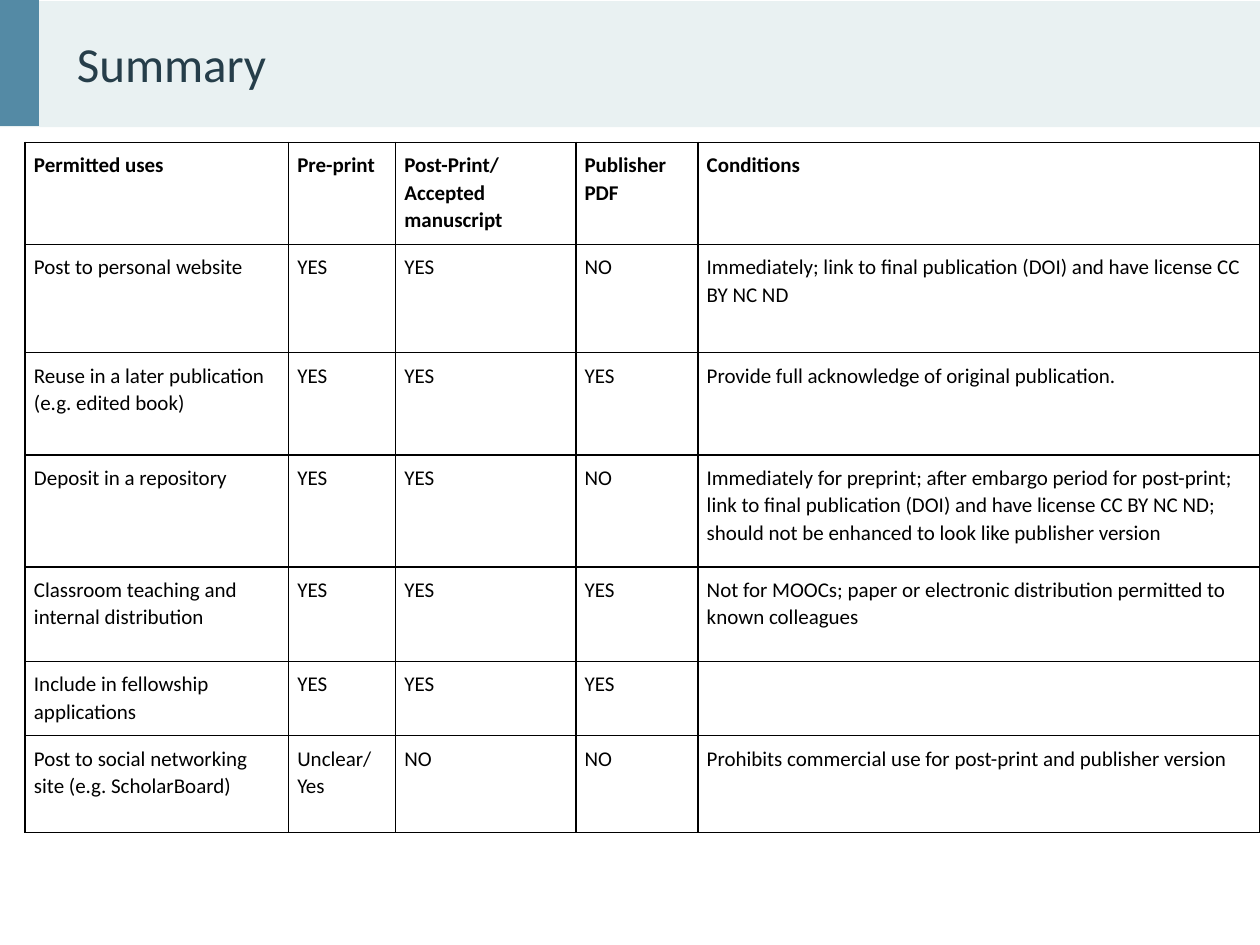
from lxml.etree import SubElement
from pptx import Presentation
from pptx.dml.color import RGBColor
from pptx.enum.shapes import MSO_SHAPE as Shape
from pptx.enum.text import MSO_ANCHOR as Anchor
from pptx.oxml.ns import qn
from pptx.util import Inches, Pt

FONT = "Calibri"
WIDTH, HEIGHT = 10, 7.5
BAND_HEIGHT, ACCENT_WIDTH = 1, 0.31
TABLE_LEFT, TABLE_TOP = 0.2, 1.13
COLUMN_WIDTHS = [2.09, 0.85, 1.43, 0.97, 4.46]
ROW_HEIGHTS = [0.81, 0.86, 0.81, 0.89, 0.75, 0.59, 0.77]
ROWS = [
    ["Permitted uses", "Pre-print", "Post-Print/Accepted manuscript", "Publisher PDF", "Conditions"],
    ["Post to personal website", "YES", "YES", "NO",
     "Immediately; link to final publication (DOI) and have license CC BY NC ND"],
    ["Reuse in a later publication (e.g. edited book)", "YES", "YES", "YES",
     "Provide full acknowledge of original publication."],
    ["Deposit in a repository", "YES", "YES", "NO",
     "Immediately for preprint; after embargo period for post-print; link to final publication (DOI) "
     "and have license CC BY NC ND; should not be enhanced to look like publisher version"],
    ["Classroom teaching and internal distribution", "YES", "YES", "YES",
     "Not for MOOCs; paper or electronic distribution permitted to known colleagues"],
    ["Include in fellowship applications", "YES", "YES", "YES", ""],
    ["Post to social networking site (e.g. ScholarBoard)", "Unclear/Yes", "NO", "NO",
     "Prohibits commercial use for post-print and publisher version"],
]


def color(value):
    return RGBColor.from_string(value)


def format_runs(paragraph, size, value, bold=False):
    for run in paragraph.runs:
        run.font.name = FONT
        run.font.size = Pt(size)
        run.font.bold = bold
        run.font.color.rgb = color(value)


def set_margins(target, horizontal, vertical):
    target.margin_left = target.margin_right = Inches(horizontal)
    target.margin_top = target.margin_bottom = Inches(vertical)


def add_band(slide, left, top, width, height, value):
    shape = slide.shapes.add_shape(
        Shape.RECTANGLE, Inches(left), Inches(top), Inches(width), Inches(height))
    shape.shadow.inherit = False
    shape.fill.solid()
    shape.fill.fore_color.rgb = color(value)
    shape.line.fill.background()


def add_title(slide, text):
    box = slide.shapes.add_textbox(
        Inches(ACCENT_WIDTH), 0, Inches(WIDTH - ACCENT_WIDTH), Inches(BAND_HEIGHT))
    frame = box.text_frame
    frame.word_wrap = True
    frame.vertical_anchor = Anchor.MIDDLE
    set_margins(frame, 0.3, 0.05)
    frame.text = text
    format_runs(frame.paragraphs[0], 28, "263E4A")


def add_borders(cell, value, width):
    properties = cell._tc.get_or_add_tcPr()
    for index, side in enumerate(["lnL", "lnR", "lnT", "lnB"]):
        line = properties.makeelement(qn(f"a:{side}"), {"w": str(Pt(width))})
        fill = SubElement(line, qn("a:solidFill"))
        SubElement(fill, qn("a:srgbClr"), val=value)
        properties.insert(index, line)


def fill_cell(cell, text, header):
    cell.text = text
    set_margins(cell, 0.07, 0.07)
    paragraph = cell.text_frame.paragraphs[0]
    paragraph.line_spacing = 1.07
    format_runs(paragraph, 12, "000000", header)
    if header:
        cell.fill.background()
    else:
        cell.fill.solid()
        cell.fill.fore_color.rgb = color("FFFFFF")
    add_borders(cell, "000000", 1)


def add_uses_table(slide):
    frame = slide.shapes.add_table(
        len(ROWS), len(COLUMN_WIDTHS), Inches(TABLE_LEFT), Inches(TABLE_TOP),
        Inches(sum(COLUMN_WIDTHS)), Inches(sum(ROW_HEIGHTS)))
    table = frame.table
    table.first_row = table.horz_banding = False
    for column, width in zip(table.columns, COLUMN_WIDTHS):
        column.width = Inches(width)
    for index, (row, height, texts) in enumerate(zip(table.rows, ROW_HEIGHTS, ROWS)):
        row.height = Inches(height)
        for cell, text in zip(row.cells, texts):
            fill_cell(cell, text, header=index == 0)


def main():
    presentation = Presentation()
    presentation.slide_width = Inches(WIDTH)
    presentation.slide_height = Inches(HEIGHT)
    slide = presentation.slides.add_slide(presentation.slide_layouts[6])
    add_band(slide, 0, 0.01, WIDTH, BAND_HEIGHT, "E9F1F2")
    add_band(slide, 0, 0, ACCENT_WIDTH, BAND_HEIGHT, "548AA5")
    add_title(slide, "Summary")
    add_uses_table(slide)
    presentation.save("out.pptx")


if __name__ == "__main__":
    main()
